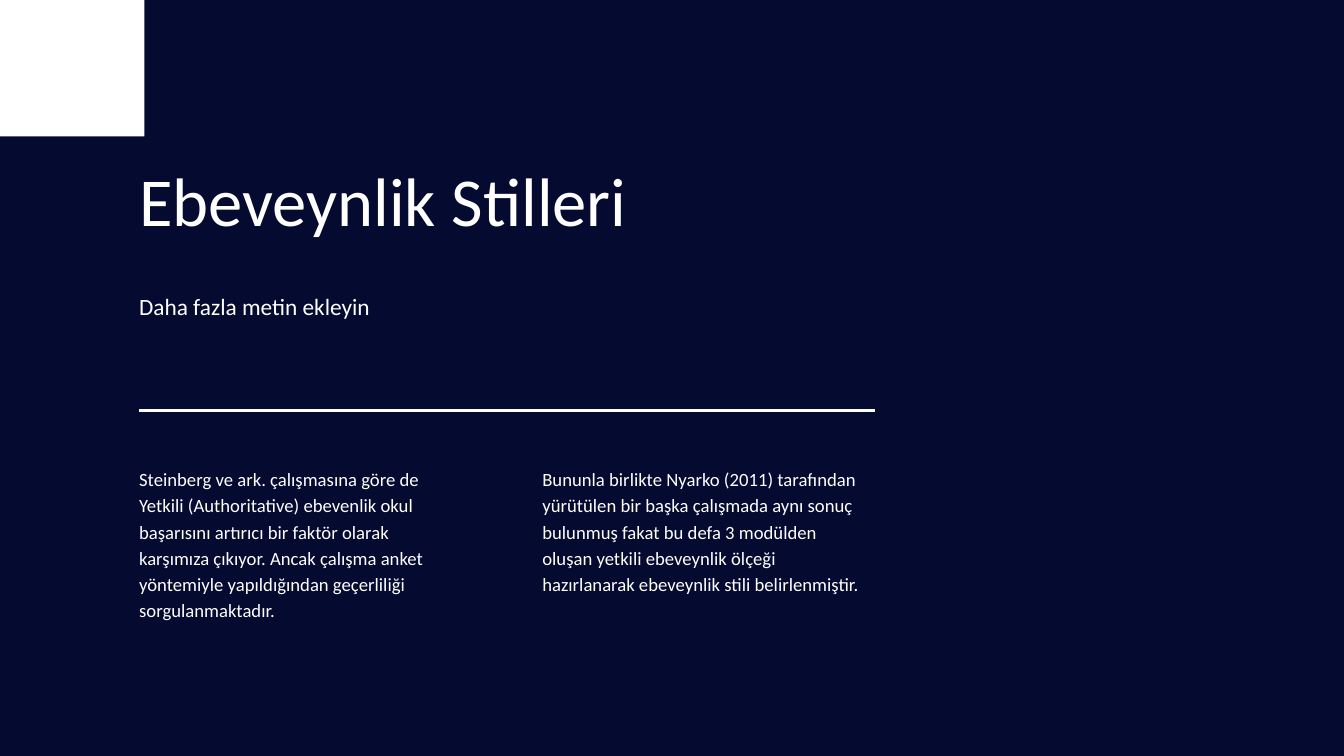
from pptx import Presentation
from pptx.dml.color import RGBColor
from pptx.enum.shapes import MSO_CONNECTOR, MSO_SHAPE
from pptx.enum.text import MSO_AUTO_SIZE
from pptx.oxml.ns import qn
from pptx.util import Emu, Pt
from lxml import etree

COLORS = {"navy": "050A30", "white": "FFFFFF"}
LEFT, RIGHT = 207, 1302
WIDE = RIGHT - LEFT
COLUMN_WIDTH, COLUMN_STEP = 478, 600


def px(length):
    """Convert px, at 100 to the inch, into EMU."""
    return Emu(length * 9144)


def add_text(text, left, top, width, height, size, line_spacing):
    frame = slide.shapes.add_textbox(px(left), px(top), px(width), px(height)).text_frame
    frame.margin_left = frame.margin_right = frame.margin_top = frame.margin_bottom = 0
    frame.word_wrap = True
    frame.auto_size = MSO_AUTO_SIZE.SHAPE_TO_FIT_TEXT
    paragraph = frame.paragraphs[0]
    paragraph.text = text
    paragraph.line_spacing = Pt(line_spacing)
    paragraph.font.name = "Calibri"
    paragraph.font.size = Pt(size)
    paragraph.font.color.rgb = white


white = RGBColor.from_string(COLORS["white"])

prs = Presentation()
prs.slide_width, prs.slide_height = px(2000), px(1125)
slide = prs.slides.add_slide(prs.slide_layouts[6])
slide.background.fill.solid()
slide.background.fill.fore_color.rgb = RGBColor.from_string(COLORS["navy"])

corner = slide.shapes.add_shape(MSO_SHAPE.RECTANGLE, 0, 0, px(215), px(203))
corner.shadow.inherit = False
corner.fill.solid()
corner.fill.fore_color.rgb = white
corner.line.fill.background()

divider = slide.shapes.add_connector(
    MSO_CONNECTOR.STRAIGHT, px(LEFT), px(611), px(RIGHT), px(611))
divider.line.color.rgb = white
divider.line.width = Pt(3)
etree.SubElement(divider._element.spPr, qn("a:effectLst"))

add_text("Ebeveynlik Stilleri", LEFT, 250, WIDE, 113, 73.5, 77.2)
add_text("Daha fazla metin ekleyin", LEFT, 428, WIDE, 45, 25, 35)

findings = [
    "Steinberg ve ark. çalışmasına göre de Yetkili (Authoritative) ebevenlik okul "
    "başarısını artırıcı bir faktör olarak karşımıza çıkıyor. Ancak çalışma anket "
    "yöntemiyle yapıldığından geçerliliği sorgulanmaktadır.",
    "Bununla birlikte Nyarko (2011) tarafından yürütülen bir başka çalışmada aynı sonuç "
    "bulunmuş fakat bu defa 3 modülden oluşan yetkili ebeveynlik ölçeği "
    "hazırlanarak ebeveynlik stili belirlenmiştir.",
]
for column, finding in enumerate(findings):
    add_text(finding, LEFT + column * COLUMN_STEP, 691, COLUMN_WIDTH, 231, 20, 28)

prs.save("out.pptx")
